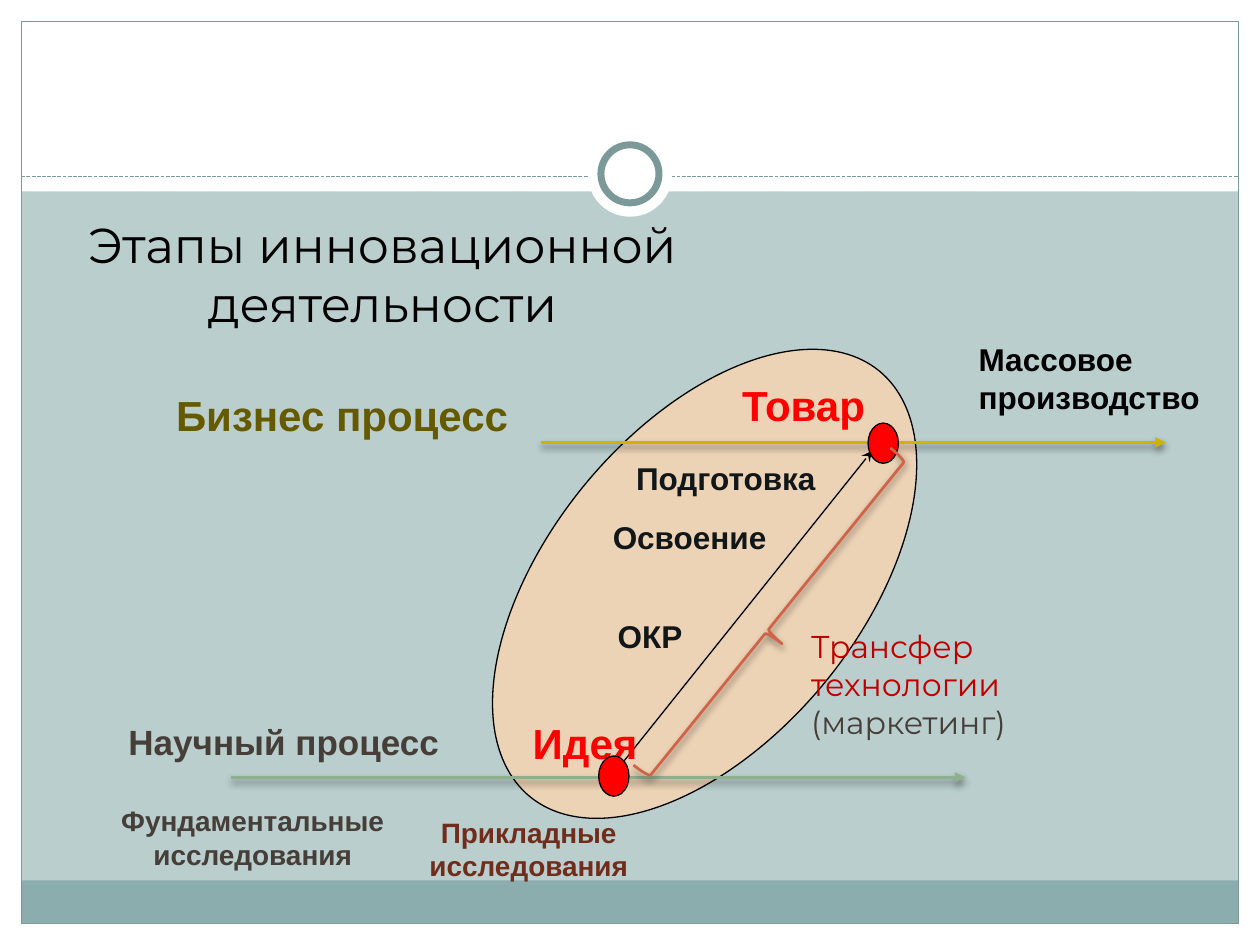
from lxml import etree
from pptx import Presentation
from pptx.dml.color import RGBColor
from pptx.enum.dml import MSO_LINE
from pptx.enum.shapes import MSO_CONNECTOR, MSO_SHAPE
from pptx.enum.text import MSO_ANCHOR, PP_ALIGN
from pptx.oxml.ns import qn
from pptx.util import Cm, Pt

RECT, OVAL, BRACE = MSO_SHAPE.RECTANGLE, MSO_SHAPE.OVAL, MSO_SHAPE.RIGHT_BRACE
STRAIGHT, DASH = MSO_CONNECTOR.STRAIGHT, MSO_LINE.SQUARE_DOT
LEFT, MID, RIGHT = PP_ALIGN.LEFT, PP_ALIGN.CENTER, PP_ALIGN.RIGHT
TOP, BOTTOM = MSO_ANCHOR.TOP, MSO_ANCHOR.BOTTOM

WHITE = RGBColor(0xFF, 0xFF, 0xFF)
BLACK = RGBColor(0x00, 0x00, 0x00)
BACK = RGBColor(0xBA, 0xCE, 0xCE)
BAND = RGBColor(0x8C, 0xAD, 0xAE)
EDGE = RGBColor(0x7C, 0x99, 0x9A)
SAND = RGBColor(0xED, 0xD3, 0xB6)
GREEN = RGBColor(0x8F, 0xB0, 0x8C)
GOLD = RGBColor(0xCC, 0xB4, 0x00)
OLIVE = RGBColor(0x66, 0x5A, 0x00)
BROWN = RGBColor(0x46, 0x3E, 0x38)
RUST = RGBColor(0x71, 0x2D, 0x1C)
CORAL = RGBColor(0xD1, 0x63, 0x49)
INK = RGBColor(0x11, 0x16, 0x18)
RED = RGBColor(0xFF, 0x00, 0x00)
WINE = RGBColor(0xC0, 0x00, 0x00)

WIDE, HIGH = 25.4, 19.05
EDGE_GAP = 0.43
INNER = WIDE - 2 * EDGE_GAP
THICK = 1.57

LABELS = [
    ("Научный процесс", (2.34, 14.4, 8, 1.09), 20, BROWN, LEFT),
    ("Бизнес процесс", (3.3, 7.72, 8, 1.27), 24, OLIVE, LEFT),
    ("Фундаментальные исследования", (2.11, 16.08, 5.97, 1.63), 16, BROWN, MID),
    ("Прикладные исследования", (8.26, 16.31, 4.8, 1.63), 16, RUST, MID),
    ("Идея", (10.49, 14.33, 2.79, 1.27), 24, RED, LEFT),
    ("Товар", (14.71, 7.52, 3.2, 1.27), 24, RED, LEFT),
    ("ОКР", (11.3, 12.32, 3.61, 1.02), 18, INK, MID),
    ("Освоение", (11.51, 10.31, 4.19, 1.02), 18, INK, RIGHT),
    ("Подготовка", (12.5, 9.12, 4.19, 1.02), 18, INK, RIGHT),
    ("Массовое производство", (19.48, 6.73, 5.44, 1.78), 18, BLACK, LEFT),
]


def lengths(box):
    return [Cm(n) for n in box]


def add_glow(shape, soft):
    """Give the shape a soft drop shadow, or an empty effect list."""
    props = shape._element.spPr
    effects = props.find(qn("a:effectLst"))
    if effects is None:
        effects = etree.SubElement(props, qn("a:effectLst"))
    if soft:
        shade = etree.SubElement(effects, qn("a:outerShdw"), blurRad=str(Pt(4)),
                                 dist=str(Pt(2)), dir="5400000", rotWithShape="0")
        color = etree.SubElement(shade, qn("a:srgbClr"), val=str(BLACK))
        etree.SubElement(color, qn("a:alpha"), val="45000")


def add_form(slide, kind, box, fill=None, line=None, width=0.75, turn=0):
    form = slide.shapes.add_shape(kind, *lengths(box))
    form.shadow.inherit = False
    form.rotation = turn
    if fill is None:
        form.fill.background()
    else:
        form.fill.solid()
        form.fill.fore_color.rgb = fill
    if line is None:
        form.line.fill.background()
    else:
        form.line.color.rgb = line
        form.line.width = Pt(width)
    return form


def add_line(slide, ends, color, width=0.75, head=None, dash=None, soft=False):
    line = slide.shapes.add_connector(STRAIGHT, *lengths(ends))
    line.line.color.rgb = color
    line.line.width = Pt(width)
    if dash is not None:
        line.line.dash_style = dash
    if head:
        etree.SubElement(line.line._get_or_add_ln(), qn("a:tailEnd"), type=head)
    add_glow(line, soft)


def add_text(slide, parts, box, size, align=LEFT, font="Arial", bold=True, anchor=TOP):
    """Add a text box with one paragraph for each (text, colour) pair."""
    frame = slide.shapes.add_textbox(*lengths(box)).text_frame
    frame.word_wrap = True
    frame.vertical_anchor = anchor
    style = {"name": font, "size": Pt(size), "bold": bold}
    for i, (text, color) in enumerate(parts):
        para = frame.add_paragraph() if i else frame.paragraphs[0]
        para.alignment = align
        run = para.add_run()
        run.text = text
        for key, value in style.items():
            setattr(run.font, key, value)
        run.font.color.rgb = color


def add_frame(slide):
    """Draw the white margins, the bottom band, the border and the ring."""
    far = WIDE - EDGE_GAP
    low = HIGH - EDGE_GAP
    for box in [(0, low, WIDE, EDGE_GAP), (0, 0, WIDE, 3.86),
                (0, 0, EDGE_GAP, HIGH), (far, 0, EDGE_GAP, HIGH)]:
        add_form(slide, RECT, box, WHITE)
    add_form(slide, RECT, (EDGE_GAP, 17.75, INNER, low - 17.75), BAND)
    add_form(slide, RECT, (EDGE_GAP, EDGE_GAP, INNER, HIGH - 2 * EDGE_GAP), line=EDGE)
    add_line(slide, (EDGE_GAP, 3.56, far, 3.56), EDGE, dash=DASH)
    for top, size, line in [(2.67, 1.7, None), (2.92, 1.17, EDGE)]:
        add_form(slide, OVAL, ((WIDE - size) / 2, top, size, size), WHITE, line, 4)


def add_brace(slide):
    brace = add_form(slide, BRACE, (15.27, 8.36, 0.79, 8.23), line=CORAL,
                     width=THICK, turn=39)
    brace.adjustments[0] = 0.08
    brace.adjustments[1] = 0.54
    add_glow(brace, True)


def main():
    deck = Presentation()
    deck.slide_width, deck.slide_height = Cm(WIDE), Cm(HIGH)
    slide = deck.slides.add_slide(deck.slide_layouts[6])
    slide.background.fill.solid()
    slide.background.fill.fore_color.rgb = BACK
    add_frame(slide)

    add_form(slide, OVAL, (11.07, 6.22, 6.27, 11.1), SAND, BLACK, turn=39.4)
    for start, end, y, color in [(4.65, 19.46, 15.67, GREEN), (10.9, 23.5, 8.92, GOLD)]:
        add_line(slide, (start, y, end, y), color, THICK, "triangle", soft=True)
    add_line(slide, (12.5, 15.44, 17.58, 9.09), BLACK, head="stealth")

    for text, box, size, color, align in LABELS:
        add_text(slide, [(text, color)], box, size, align)
    for left, top in [(12.07, 15.24), (17.5, 8.53)]:
        add_form(slide, OVAL, (left, top, 0.61, 0.81), RED, BLACK)
    add_text(slide, [("Этапы инновационной деятельности", BLACK)],
             (0.71, 4.72, 14, 2.11), 28, MID, "Montserrat", False, BOTTOM)
    add_brace(slide)
    add_text(slide, [("Трансфер технологии", WINE), ("(маркетинг)", BROWN)],
             (16.1, 12.52, 5.21, 2.57), 18, font="Montserrat", bold=False)
    deck.save("out.pptx")


if __name__ == "__main__":
    main()
